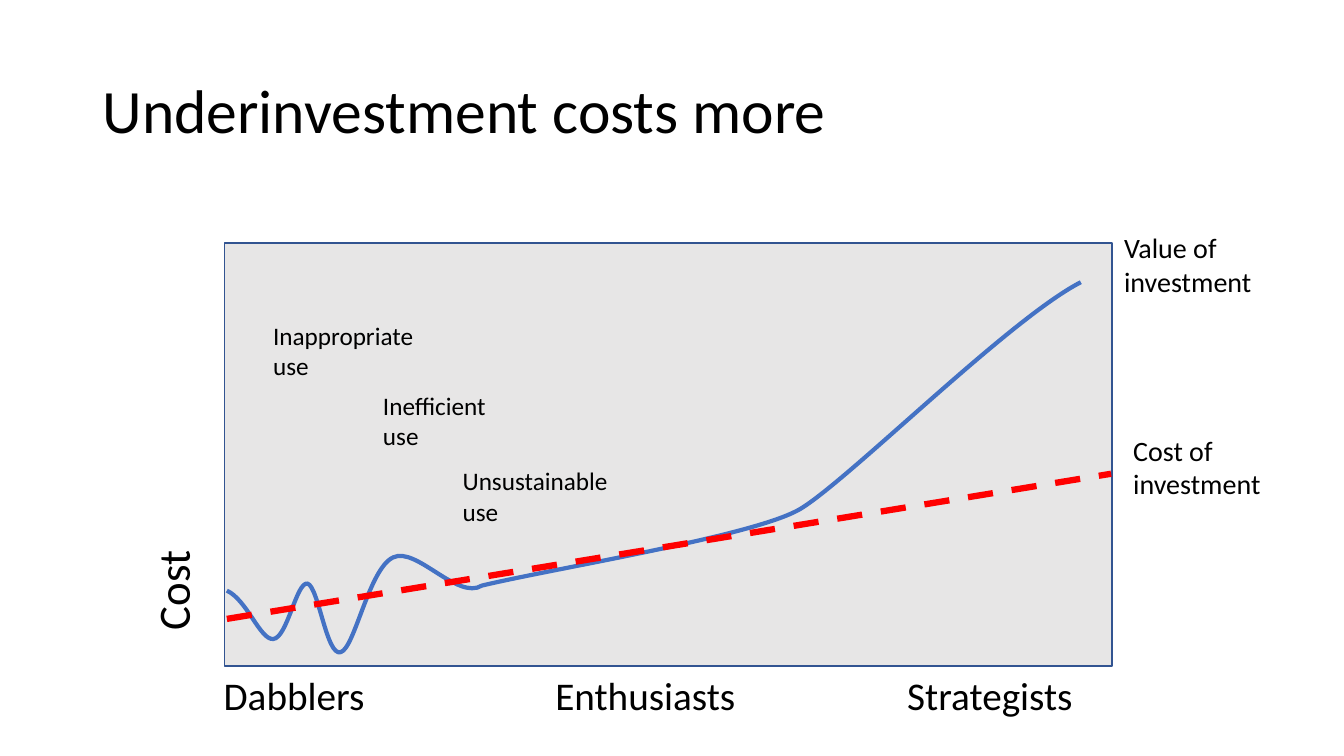
"""Build a slide that plots the value of an investment against its cost."""
from dataclasses import dataclass

from lxml import etree
from pptx import Presentation
from pptx.dml.color import RGBColor
from pptx.enum.dml import MSO_LINE
from pptx.enum.shapes import MSO_CONNECTOR, MSO_SHAPE
from pptx.enum.text import MSO_ANCHOR, MSO_AUTO_SIZE
from pptx.oxml.ns import qn
from pptx.util import Emu, Pt

PX = 9144
RECTANGLE = MSO_SHAPE.RECTANGLE
STRAIGHT = MSO_CONNECTOR.STRAIGHT
DASH = MSO_LINE.DASH
TOP, MIDDLE = MSO_ANCHOR.TOP, MSO_ANCHOR.MIDDLE
GROW, FIXED = MSO_AUTO_SIZE.SHAPE_TO_FIT_TEXT, MSO_AUTO_SIZE.NONE


@dataclass(frozen=True)
class Theme:
    font: str = "Calibri"
    ink: str = "000000"
    plot: str = "E7E6E6"
    frame: str = "325491"
    value: str = "4472C4"
    cost: str = "FF0000"
    title: int = 44
    axis: int = 32
    stage: int = 28
    series: int = 20
    note: int = 18


def px(*lengths):
    return [Emu(length * PX) for length in lengths]


def apply(target, values):
    for name, value in values.items():
        setattr(target, name, value)


class SlideBuilder:
    def __init__(self, page, theme):
        self.page = page
        self.theme = theme

    def stroke(self, shape, color, width):
        shape.line.color.rgb = RGBColor.from_string(color)
        shape.line.width = Pt(width)

    def text(self, words, place, size, rotation=0, anchor=TOP, fit=GROW, spacing=1.0):
        box = self.page.shapes.add_textbox(*px(*place))
        box.rotation = rotation
        frame = box.text_frame
        apply(frame, {"word_wrap": True, "auto_size": fit, "vertical_anchor": anchor})
        para = frame.paragraphs[0]
        para.line_spacing = spacing
        span = para.add_run()
        span.text = words
        apply(span.font, {"name": self.theme.font, "size": Pt(size)})
        span.font.color.rgb = RGBColor.from_string(self.theme.ink)

    def panel(self, place, fill, line, width):
        panel = self.page.shapes.add_shape(RECTANGLE, *px(*place))
        panel.shadow.inherit = False
        panel.fill.solid()
        panel.fill.fore_color.rgb = RGBColor.from_string(fill)
        self.stroke(panel, line, width)

    def curve(self, start, pieces, color, width):
        outline = self.page.shapes.build_freeform(*px(*start))
        outline.add_line_segments([px(*piece[-1]) for piece in pieces], close=False)
        curve = outline.convert_to_shape()
        segments = list(curve._element.iter(qn("a:lnTo")))
        for segment, piece in zip(segments, pieces):
            bend = etree.Element(qn("a:cubicBezTo"))
            for point in piece:
                x, y = px(*point)
                etree.SubElement(bend, qn("a:pt"), x=str(x - curve.left), y=str(y - curve.top))
            segment.getparent().replace(segment, bend)
        curve.shadow.inherit = False
        curve.fill.background()
        self.stroke(curve, color, width)

    def dashed_line(self, start, end, color, width):
        line = self.page.shapes.add_connector(STRAIGHT, *px(*start, *end))
        self.stroke(line, color, width)
        line.line.dash_style = DASH
        etree.SubElement(line._element.spPr, qn("a:effectLst"))


def main():
    theme = Theme()
    deck = Presentation()
    deck.slide_width, deck.slide_height = px(1333, 750)
    page = deck.slides.add_slide(deck.slide_layouts[6])
    slide = SlideBuilder(page, theme)

    slide.text("Underinvestment costs more", (92, 40, 1150, 145), theme.title,
               anchor=MIDDLE, fit=FIXED, spacing=0.9)
    slide.panel((223, 241, 880, 420), theme.plot, theme.frame, 1)

    value_pieces = [
        ((245, 595), (258, 635), (271, 634)),
        ((285, 633), (294, 577), (305, 579)),
        ((316, 582), (324, 652), (338, 647)),
        ((352, 643), (366, 564), (390, 553)),
        ((413, 542), (454, 596), (478, 581)),
        ((544, 565), (735, 534), (788, 508)),
        ((827, 491), (998, 318), (1072, 280)),
    ]
    slide.curve((225, 586), value_pieces, theme.value, 3)
    slide.dashed_line((225, 614), (1102, 470), theme.cost, 4.5)

    for words, left, top in (("Value of investment", 1105, 224),
                             ("Cost of investment", 1114, 425)):
        slide.text(words, (left, top, 186, 77), theme.series)

    for words, left, width in (("Dabblers", 212, 192),
                               ("Enthusiasts", 541, 213),
                               ("Strategists", 890, 213)):
        slide.text(words, (left, 661, width, 57), theme.stage)

    slide.text("Cost", (78, 510, 186, 64), theme.axis, rotation=270)

    for words, left, top, width in (("Inappropriate use", 261, 313, 159),
                                    ("Inefficient use", 370, 382, 159),
                                    ("Unsustainable use", 449, 457, 187)):
        slide.text(words, (left, top, width, 71), theme.note)

    deck.save("out.pptx")


if __name__ == "__main__":
    main()
